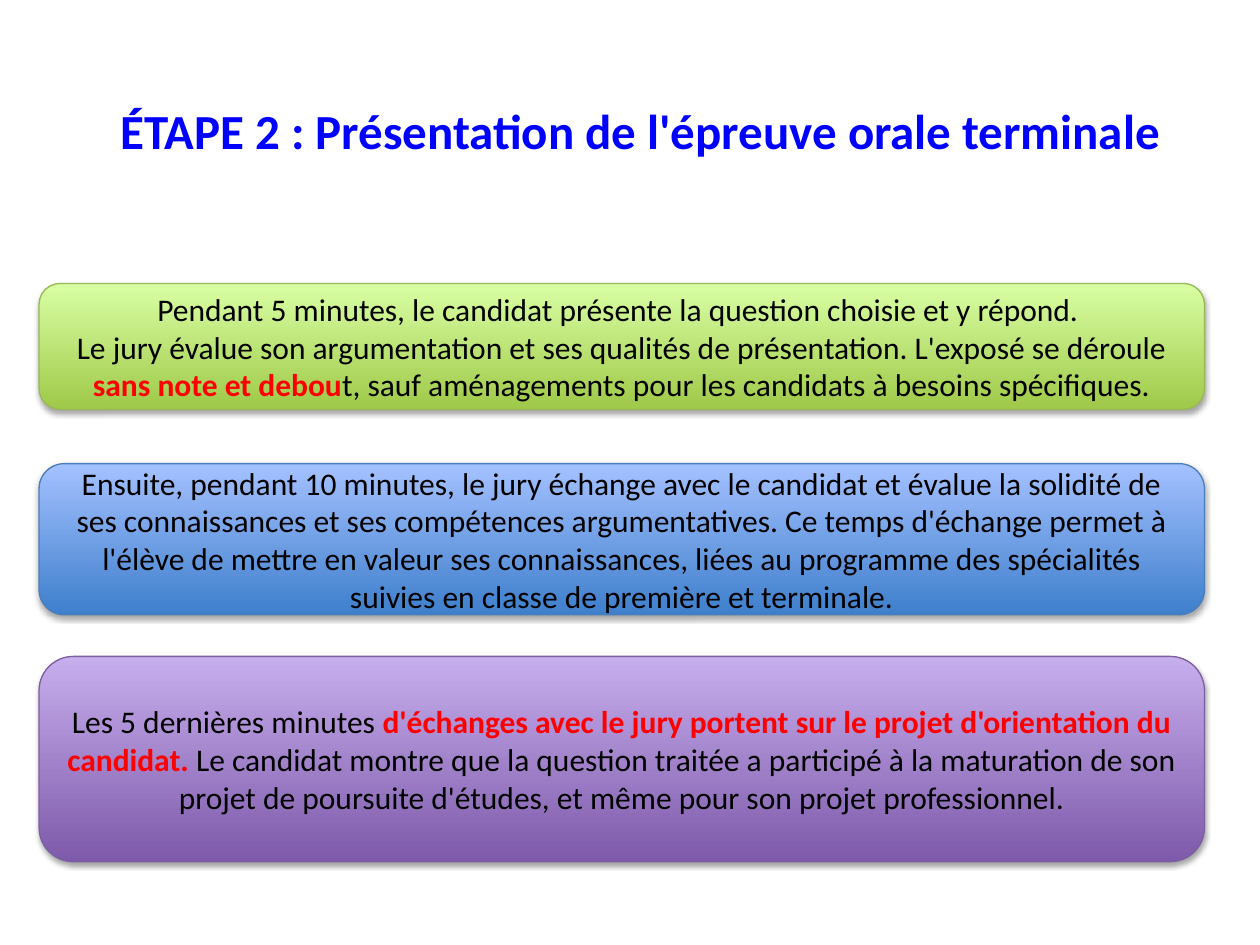
from lxml import etree
from pptx import Presentation
from pptx import util as u
from pptx.dml.color import RGBColor
from pptx.enum import shapes, text
from pptx.oxml import ns

BLACK, RED, BLUE = "000000", "FF0000", "0000FF"
LEFT, WIDTH = 0.31, 9.25


def color(value):
    return RGBColor.from_string(value)


class SlideBuilder:
    font = "Calibri"
    body_size = 18
    title_size = 28

    def __init__(self, slide):
        self.slide = slide

    def place(self, shape, left, top, width, height):
        shape.left, shape.top = u.Inches(left), u.Inches(top)
        shape.width, shape.height = u.Inches(width), u.Inches(height)

    def run(self, paragraph, content, size, hue, bold=False):
        run = paragraph.add_run()
        run.text = content
        run.font.name = self.font
        run.font.size = u.Pt(size)
        run.font.bold = bold
        run.font.color.rgb = color(hue)

    def title(self, content, left, top, width, height):
        shape = self.slide.shapes.title
        self.place(shape, left, top, width, height)
        frame = shape.text_frame
        frame.word_wrap = True
        frame.auto_size = text.MSO_AUTO_SIZE.NONE
        frame.vertical_anchor = text.MSO_ANCHOR.TOP
        paragraph = frame.paragraphs[0]
        paragraph.alignment = text.PP_ALIGN.CENTER
        self.run(paragraph, content, self.title_size, BLUE, True)

    def shadow(self, shape):
        shape.shadow.inherit = False
        effects = shape._element.spPr.find(ns.qn("a:effectLst"))
        outer = etree.SubElement(
            effects, ns.qn("a:outerShdw"), blurRad=str(u.Pt(3.1)),
            dist=str(u.Pt(1.8)), dir="5400000", rotWithShape="0")
        shade = etree.SubElement(outer, ns.qn("a:srgbClr"), val=BLACK)
        etree.SubElement(shade, ns.qn("a:alpha"), val="35000")

    def card(self, top, height, gradient, outline, paragraphs):
        shape = self.slide.shapes.add_shape(
            shapes.MSO_SHAPE.ROUNDED_RECTANGLE, u.Inches(LEFT), u.Inches(top),
            u.Inches(WIDTH), u.Inches(height))
        shape.fill.gradient()
        shape.fill.gradient_angle = 90
        for stop, hue in zip(shape.fill.gradient_stops, gradient):
            stop.color.rgb = color(hue)
        shape.line.color.rgb = color(outline)
        shape.line.width = u.Pt(0.75)
        self.shadow(shape)
        frame = shape.text_frame
        frame.word_wrap = True
        frame.vertical_anchor = text.MSO_ANCHOR.MIDDLE
        for index, runs in enumerate(paragraphs):
            paragraph = frame.add_paragraph() if index else frame.paragraphs[0]
            paragraph.alignment = text.PP_ALIGN.CENTER
            for content, strong in runs:
                self.run(paragraph, content, self.body_size,
                         RED if strong else BLACK, strong)


def main():
    presentation = Presentation()
    presentation.slide_width = u.Inches(10)
    presentation.slide_height = u.Inches(7.5)
    layout = presentation.slide_layouts.get_by_name("Title Only")
    builder = SlideBuilder(presentation.slides.add_slide(layout))

    builder.title("ÉTAPE 2 : Présentation de l'épreuve orale terminale",
                  0.6, 0.75, 8.96, 0.56)
    builder.card(2.25, 1, ("9FC949", "D9FFA4"), "98B855", [
        [("Pendant 5 minutes, le candidat présente la question choisie "
          "et y répond. ", False)],
        [("Le jury évalue son argumentation et ses qualités de présentation. "
          "L'exposé se déroule ", False),
         ("sans note et debou", True),
         ("t, sauf aménagements pour les candidats à besoins spécifiques.",
          False)],
    ])
    builder.card(3.68, 1.2, ("3E7FCC", "A4C1FF"), "4A7EBB", [
        [("Ensuite, pendant 10 minutes, le jury échange avec le candidat et "
          "évalue la solidité de ses connaissances et ses compétences "
          "argumentatives. Ce temps d'échange permet à l'élève de mettre en "
          "valeur ses connaissances, liées au programme des spécialités "
          "suivies en classe de première et terminale.", False)],
    ])
    builder.card(5.21, 1.63, ("7E5AAA", "C7AEED"), "7D5FA0", [
        [("Les 5 dernières minutes ", False),
         ("d'échanges avec le jury portent sur le projet d'orientation du "
          "candidat.", True),
         (" Le candidat montre que la question traitée a participé à la "
          "maturation de son projet de poursuite d'études, et même pour son "
          "projet professionnel.", False)],
    ])
    presentation.save("out.pptx")


if __name__ == "__main__":
    main()
